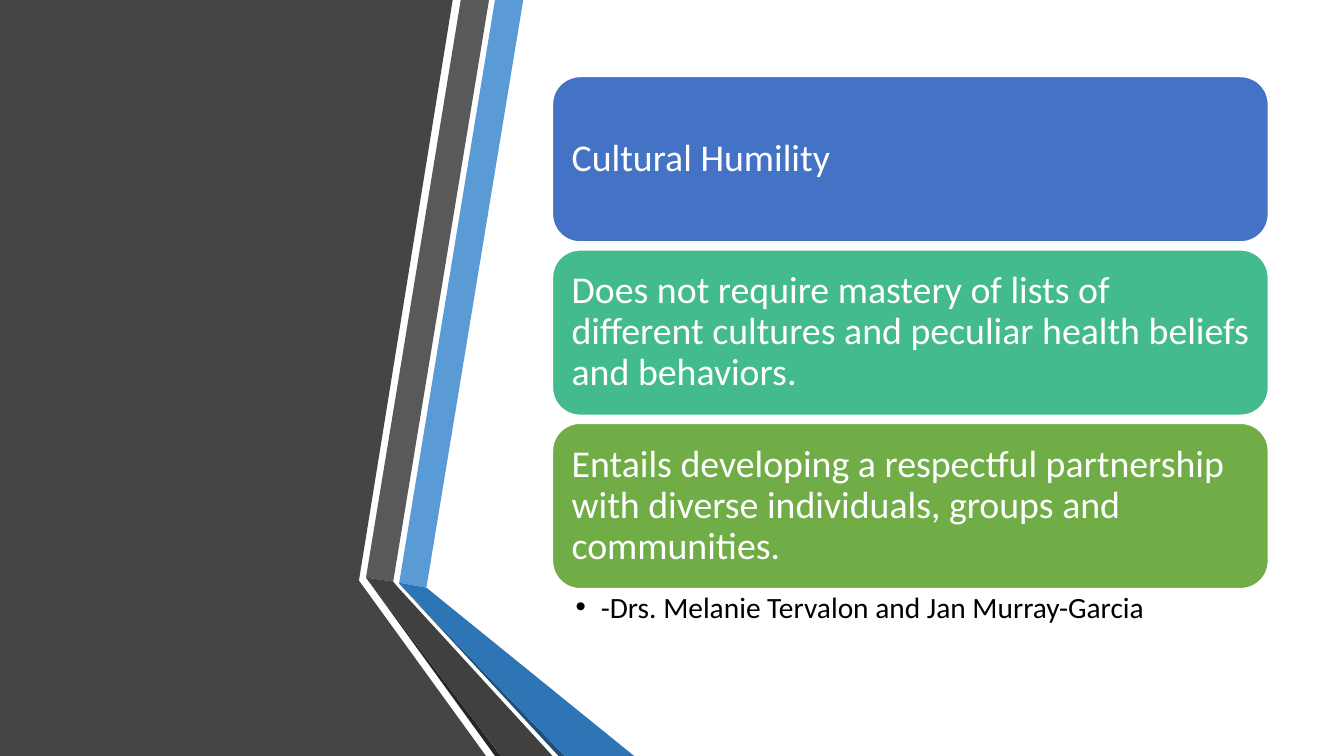
"""Build a slide of three stacked cards beside a folded ribbon."""
from pptx import Presentation
from pptx import util as u
from pptx.dml.color import RGBColor
from pptx.enum import shapes, text


def tint(fill, code):
    fill.solid()
    fill.fore_color.rgb = RGBColor.from_string(code)


class Deck:
    def __init__(self):
        self.font = "Calibri"
        self.show = Presentation()
        self.show.slide_width = u.Inches(13.33)
        self.show.slide_height = u.Inches(7.5)
        self.slide = self.show.slides.add_slide(self.show.slide_layouts[1])
        self.items = self.slide.shapes

    def style(self, shape, words, size, code, pads, anchor):
        frame = shape.text_frame
        frame.text = words
        frame.word_wrap = True
        frame.auto_size = text.MSO_AUTO_SIZE.NONE
        frame.vertical_anchor = anchor
        frame.margin_left, frame.margin_top, frame.margin_right, frame.margin_bottom = map(u.Inches, pads)
        line = frame.paragraphs[0]
        line.alignment = text.PP_ALIGN.LEFT
        line.line_spacing = 0.9
        line.space_before = u.Pt(0)
        for run in line.runs:
            run.font.name = self.font
            run.font.size = u.Pt(size)
            tint(run.font.fill, code)
        return line

    def label(self, shape, words):
        self.style(shape, words, 27, "FFFFFF", [0.11] * 4, text.MSO_ANCHOR.MIDDLE)

    def place(self, shape, box):
        shape.left, shape.top, shape.width, shape.height = map(u.Inches, box)
        self.items._spTree.append(shape._element)

    def band(self, code, points):
        start, *rest = [(u.Inches(x), u.Inches(y)) for x, y in points]
        pen = self.items.build_freeform(*start)
        pen.add_line_segments(rest, close=True)
        shape = pen.convert_to_shape()
        shape.shadow.inherit = False
        tint(shape.fill, code)
        shape.line.fill.background()

    def card(self, top, code):
        shape = self.items.add_shape(shapes.MSO_SHAPE.ROUNDED_RECTANGLE,
                                     *map(u.Inches, (5.48, top, 7.1, 1.64)))
        shape.shadow.inherit = False
        tint(shape.fill, code)
        tint(shape.line.fill, "FFFFFF")
        shape.line.width = u.Pt(1)
        return shape

    def title(self, words, top):
        shape = self.items.title
        self.place(shape, (5.56, top + 0.08, 6.94, 1.48))
        self.label(shape, words)

    def list(self, words, box):
        shape = self.slide.placeholders[1]
        self.place(shape, box)
        line = self.style(shape, words, 21, "000000", (0.23, 0.04, 0.21, 0.04), text.MSO_ANCHOR.TOP)
        props = line._p.get_or_add_pPr()
        props.set("marL", str(u.Inches(0.25)))
        props.set("indent", str(u.Inches(-0.25)))


BANDS = [
    ("454545", [(0, 0), (4.49, 0), (3.56, 5.76), (4.82, 7.5), (0, 7.5)]),
    ("5B9BD5", [(3.96, 5.78), (4.23, 5.83), (5.19, 0), (4.91, 0)]),
    ("595959", [(4.85, 0), (4.57, 0), (3.63, 5.73), (3.9, 5.77)]),
    ("262626", [(3.63, 5.73), (4.91, 7.5), (4.97, 7.5)]),
    ("1F4E79", [(3.96, 5.79), (5.54, 7.5), (5.6, 7.5)]),
    ("2E75B6", [(3.96, 5.79), (5.6, 7.5), (6.29, 7.5), (4.23, 5.83), (3.96, 5.78)]),
    ("404040", [(5.48, 7.5), (3.95, 5.83), (3.9, 5.77), (3.63, 5.73), (4.97, 7.5)]),
]
CARDS = [
    ("43BB8D", "Does not require mastery of lists of different cultures and peculiar health beliefs and behaviors."),
    ("70AD47", "Entails developing a respectful partnership with diverse individuals, groups and communities."),
]
TOP, STEP = 0.76, 1.72


def main():
    deck = Deck()
    for code, points in BANDS:
        deck.band(code, points)
    deck.card(TOP, "4472C4")
    deck.title("Cultural Humility", TOP)
    for row, (code, words) in enumerate(CARDS, 1):
        deck.label(deck.card(TOP + row * STEP, code), words)
    deck.list("-Drs. Melanie Tervalon and Jan Murray-Garcia", (5.48, 5.84, 7.1, 0.49))
    deck.show.save("out.pptx")


if __name__ == "__main__":
    main()
